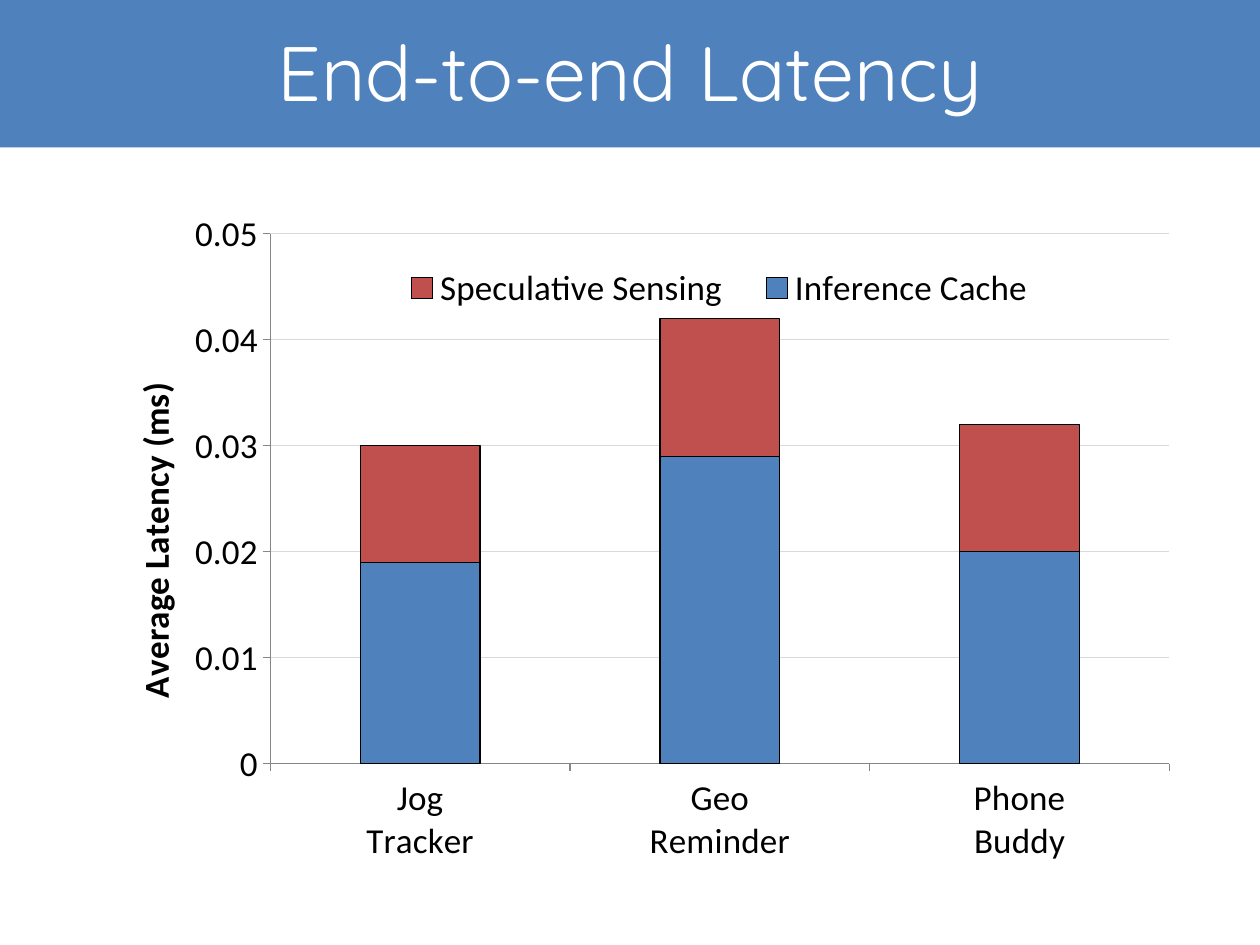
from lxml import etree
from pptx import Presentation
from pptx.chart.data import CategoryChartData
from pptx.dml.color import RGBColor
from pptx.enum.chart import XL_CHART_TYPE, XL_LEGEND_POSITION, XL_TICK_MARK
from pptx.enum.shapes import MSO_SHAPE
from pptx.enum.text import MSO_ANCHOR, PP_ALIGN
from pptx.util import Inches, Pt

STACKED = XL_CHART_TYPE.COLUMN_STACKED
RIGHT = XL_LEGEND_POSITION.RIGHT
OUT = XL_TICK_MARK.OUTSIDE
RECT = MSO_SHAPE.RECTANGLE
MIDDLE = MSO_ANCHOR.MIDDLE
CENTER = PP_ALIGN.CENTER
NS = "http://schemas.openxmlformats.org/drawingml/2006/chart"

# Content
TITLE = "End-to-end Latency"
AXIS = "Average Latency (ms)"
CATS = ["Jog\nTracker", "Geo\nReminder", "Phone\nBuddy"]
SERIES = [
    ("Inference Cache", [0.019, 0.029, 0.02], "4F81BD"),
    ("Speculative Sensing", [0.011, 0.013, 0.012], "C0504D"),
]

# Places in inches; chart parts as shares of the chart's size
BAND = (0, -0.08, 10, 1.25)
HEAD = (0.5, -0.17, 9, 1.47)
CHART = (0.58, 1.58, 9, 5.42)
PLOT = {"x": 0.174, "y": 0.051, "w": 0.793, "h": 0.776}
KEY = {"x": 0.27, "y": 0.09, "w": 0.6, "h": 0.08}
LABEL = {"x": 0.045, "y": 0.26}


def color(code):
    return RGBColor.from_string(code)


def box(place):
    return [Inches(n) for n in place]


def style(font, size, code, name):
    font.size, font.name = Pt(size), name
    font.color.rgb = color(code)


def draw(line, code, width=0.75):
    line.color.rgb = color(code)
    line.width = Pt(width)


def place(node, index, shares, inner=False):
    """Give a chart part a fixed layout."""
    for old in node.findall(f"{{{NS}}}layout"):
        node.remove(old)
    layout = etree.Element(f"{{{NS}}}layout")
    manual = etree.SubElement(layout, f"{{{NS}}}manualLayout")
    rows = [("layoutTarget", "inner")] if inner else []
    rows += [("xMode", "edge"), ("yMode", "edge"), *shares.items()]
    for tag, val in rows:
        etree.SubElement(manual, f"{{{NS}}}{tag}").set("val", str(val))
    node.insert(index, layout)


deck = Presentation()
deck.slide_width, deck.slide_height = Inches(10), Inches(7.5)
slide = deck.slides.add_slide(deck.slide_layouts[6])

# Title band
band = slide.shapes.add_shape(RECT, *box(BAND))
band.shadow.inherit = False
band.fill.solid()
band.fill.fore_color.rgb = color("4F81BD")
band.line.fill.background()

head = slide.shapes.add_textbox(*box(HEAD)).text_frame
head.word_wrap = True
head.vertical_anchor = MIDDLE
para = head.paragraphs[0]
para.text, para.alignment = TITLE, CENTER
style(para.font, 44, "FFFFFF", "Quicksand")

# Chart
data = CategoryChartData()
data.categories = CATS
for name, vals, _ in SERIES:
    data.add_series(name, vals)
chart = slide.shapes.add_chart(STACKED, *box(CHART), data).chart
chart.has_title = False
style(chart.font, 20, "000000", "Calibri")
plot = chart.plots[0]
plot.gap_width, plot.overlap = 150, 100
plot.vary_by_categories = False
for bar, (_, _, code) in zip(plot.series, SERIES):
    bar.format.fill.solid()
    bar.format.fill.fore_color.rgb = color(code)
    draw(bar.format.line, "000000")
place(chart._chartSpace.find(f".//{{{NS}}}plotArea"), 0, PLOT, True)

# Axes
axis = chart.value_axis
for each in (axis, chart.category_axis):
    each.major_tick_mark = OUT
    draw(each.format.line, "868686")
axis.minimum_scale, axis.maximum_scale, axis.major_unit = 0, 0.05, 0.01
axis.tick_labels.number_format = "General"
axis.tick_labels.number_format_is_linked = False
axis.has_major_gridlines = True
draw(axis.major_gridlines.format.line, "D9D9D9")
label = axis.axis_title
label.text_frame.text = AXIS
font = label.text_frame.paragraphs[0].font
style(font, 20, "000000", "Calibri")
font.bold = True
place(label._element, 1, LABEL)

# Legend
chart.has_legend = True
key = chart.legend
key.position = RIGHT
key.include_in_layout = False
place(key._element, 1, KEY)

deck.save("out.pptx")
